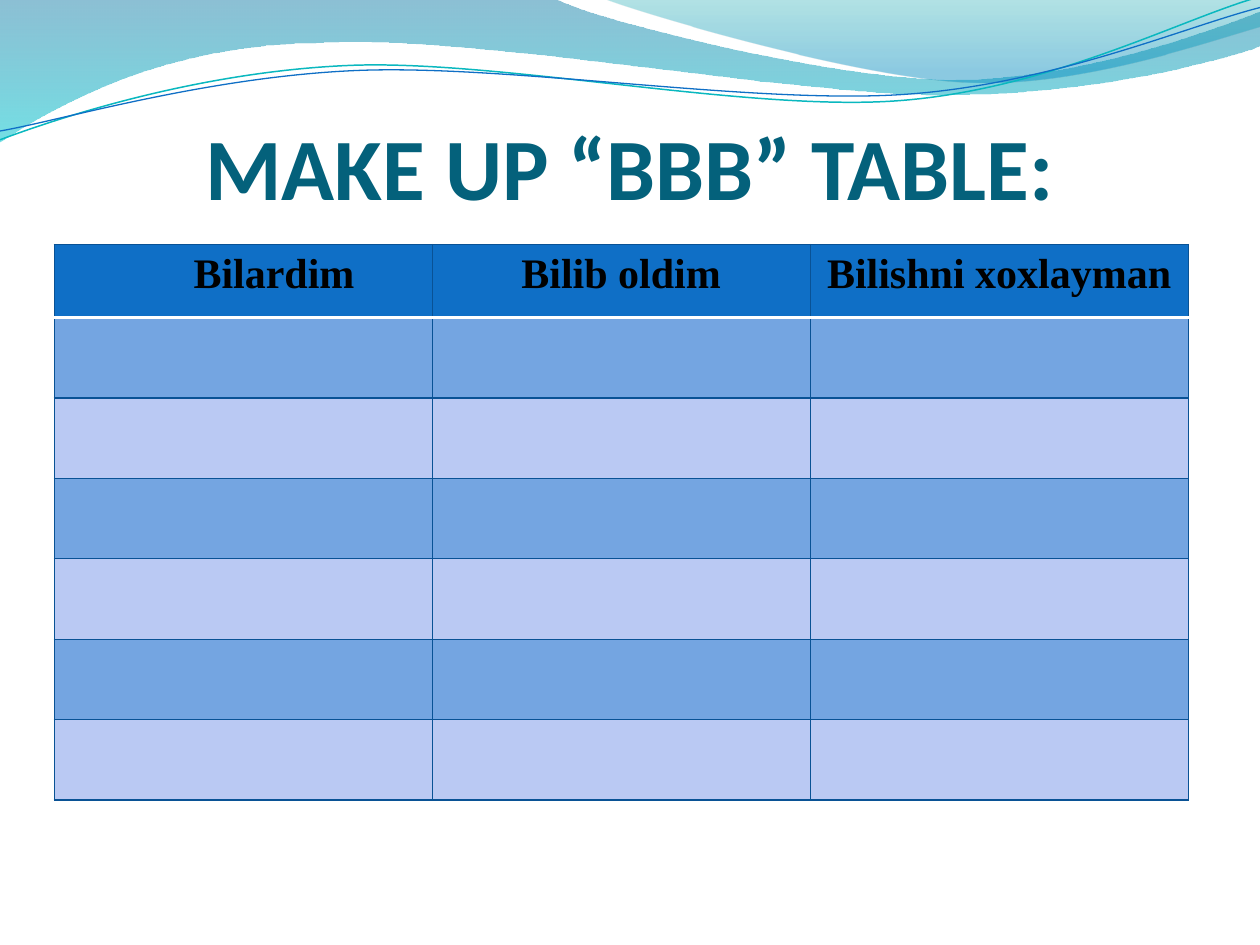
from pptx import Presentation
from pptx.dml.color import RGBColor
from pptx.enum.text import MSO_ANCHOR, MSO_AUTO_SIZE, PP_ALIGN
from pptx.oxml.ns import qn
from pptx.util import Inches, Pt
from lxml.etree import SubElement, Element

# Content
TITLE = "MAKE UP “BBB” TABLE:"
HEADS = ["Bilardim", "Bilib oldim", "Bilishni xoxlayman"]
ROWS = 6

THEME = {
    "title": "04617B", "text": "000000", "head": "0F6FC6",
    "bands": ["74A5E1", "BAC9F3"], "edge": "095295", "rule": "FFFFFF",
    "title_font": "Calibri", "head_font": "Times New Roman",
    "title_size": 50, "head_size": 24,
}

# Each wave: a start, then straight (2 numbers) or curved (6 numbers) steps
BANDS = [
    ([(0, -0.01), (4.4, -0.01), (4.76, 0.17, 6.64, 0.63, 7.58, 0.63),
      (8.53, 0.63, 9.58, 0.26, 10, 0.09), (10.01, 0.36),
      (9.83, 0.44, 8.7, 0.76, 7.46, 0.75), (6.22, 0.75, 3.82, 0.28, 2.57, 0.34),
      (1.29, 0.35, 0.46, 0.83, -0.01, 1.13)],
     [(0, "0074A1", 45), (1, "00C6CF", 55)]),
    ([(4.79, -0.01), (5.09, 0.11, 6.82, 0.62, 7.69, 0.65),
      (8.56, 0.69, 9.61, 0.32, 10, 0.21), (10, 0)],
     [(0, "00A1A9", 30), (0.8, "008BBF", 45)]),
]
LINES = [
    ([(0, 1.11), (0.48, 0.93, 1.58, 0.57, 2.77, 0.52),
      (3.95, 0.47, 5.93, 0.89, 7.13, 0.8), (8.33, 0.71, 9.38, 0.15, 9.98, -0.02)],
     "0AB8BF", 0.85),
    ([(0, 1.04), (0.47, 0.96, 1.64, 0.61, 2.83, 0.56),
      (4.03, 0.51, 5.97, 0.83, 7.17, 0.75), (8.36, 0.67, 9.41, 0.21, 10, 0.06)],
     "0F6FC6", 0.75),
]


def rgb(name):
    return RGBColor.from_string(THEME.get(name, name))


def add_wave(slide, steps, close):
    points = [(Inches(s[i]), Inches(s[i + 1]))
              for s in steps for i in range(0, len(s), 2)]
    pen = slide.shapes.build_freeform(*points[0])
    pen.add_line_segments(points[1:], close=close)
    wave = pen.convert_to_shape()
    wave.shadow.inherit = False
    # Join each curved step's three points into one Bezier curve
    sides = iter(wave._element.findall(".//" + qn("a:lnTo")))
    for step in steps[1:]:
        side = next(sides)
        if len(step) == 6:
            side.addprevious(curve := Element(qn("a:cubicBezTo")))
            for part in (side, next(sides), next(sides)):
                curve.append(part[0])
                part.getparent().remove(part)
    return wave


def add_band(slide, steps, stops):
    wave = add_wave(slide, steps, True)
    wave.line.fill.background()
    wave.fill.gradient()
    wave.fill.gradient_angle = 270
    for stop, (place, color, _) in zip(wave.fill.gradient_stops, stops):
        stop.position = place
        stop.color.rgb = rgb(color)
    nodes = wave._element.spPr.findall(".//" + qn("a:srgbClr"))
    for node, (_, _, alpha) in zip(nodes, stops):
        SubElement(node, qn("a:alpha"), val=str(alpha * 1000))


def add_line(slide, steps, color, width):
    wave = add_wave(slide, steps, False)
    wave.fill.background()
    wave.line.color.rgb = rgb(color)
    wave.line.width = Pt(width)


def style(para, font, size, color):
    para.alignment = PP_ALIGN.CENTER
    for run in para.runs:
        run.font.name = THEME[font]
        run.font.size = Pt(THEME[size])
        run.font.bold = True
        run.font.color.rgb = rgb(color)


def set_edges(cell, row):
    props = cell._tc.get_or_add_tcPr()
    for i, side in enumerate("LRTB"):
        ruled = (row, side) in ((0, "B"), (1, "T"))
        line = Element(qn("a:ln" + side), w=str(Pt(2 if ruled else 0.75)))
        fill = SubElement(line, qn("a:solidFill"))
        SubElement(fill, qn("a:srgbClr"), val=THEME["rule" if ruled else "edge"])
        props.insert(i, line)


def add_title(slide):
    title = slide.shapes.title
    title.left, title.top = Inches(0.5), Inches(0.44)
    title.width, title.height = Inches(9), Inches(2.13)
    frame = title.text_frame
    frame.text = TITLE
    frame.auto_size = MSO_AUTO_SIZE.NONE
    frame.vertical_anchor = MSO_ANCHOR.BOTTOM
    frame.margin_left = frame.margin_right = frame.margin_top = 0
    frame.margin_bottom = Inches(0.84)
    style(frame.paragraphs[0], "title_font", "title_size", "title")


def add_grid(slide):
    high, top = Inches(4.41), Inches(0.58)
    grid = slide.shapes.add_table(ROWS + 1, len(HEADS), Inches(0.43), Inches(1.94),
                                  Inches(9), high).table
    for i, row in enumerate(grid.rows):
        row.height = (high - top) // ROWS if i else top
        for cell in row.cells:
            cell.fill.solid()
            cell.fill.fore_color.rgb = rgb(THEME["bands"][(i - 1) % 2] if i else "head")
            set_edges(cell, i)
    for cell, head in zip(grid.rows[0].cells, HEADS):
        cell.text_frame.text = head
        cell.margin_left = cell.margin_right = Inches(0.07)
        cell.margin_top = cell.margin_bottom = 0
        para = cell.text_frame.paragraphs[0]
        para.line_spacing = 1.15
        style(para, "head_font", "head_size", "text")
    # First heading has a first-line indent
    first = grid.cell(0, 0).text_frame.paragraphs[0]
    first._p.get_or_add_pPr().set("indent", str(Inches(0.49)))


def main():
    deck = Presentation()
    deck.slide_width, deck.slide_height = Inches(10), Inches(7.5)
    slide = deck.slides.add_slide(deck.slide_layouts[5])
    for band in BANDS:
        add_band(slide, *band)
    for line in LINES:
        add_line(slide, *line)
    add_title(slide)
    add_grid(slide)
    deck.save("out.pptx")


if __name__ == "__main__":
    main()
